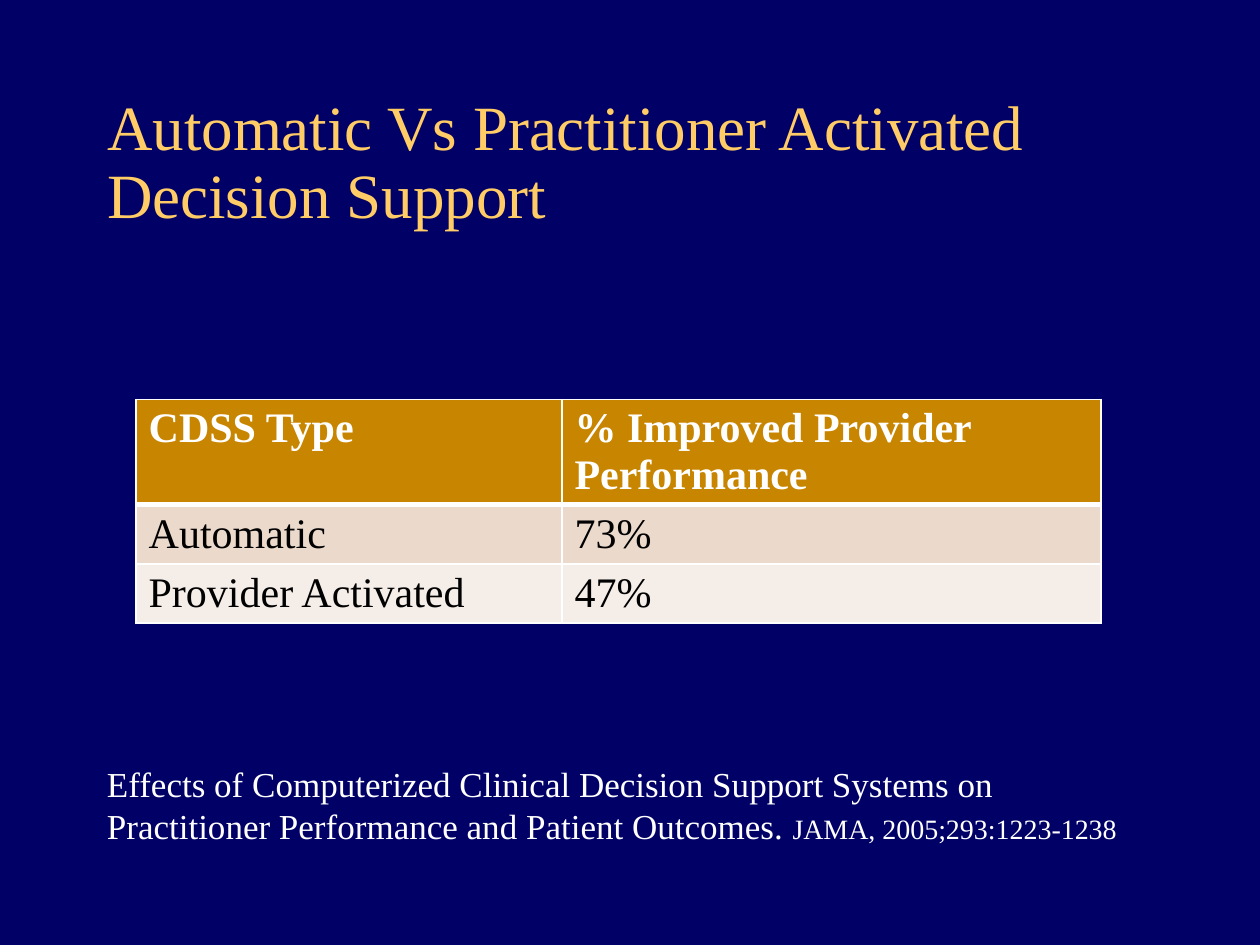
from lxml import etree
from pptx import Presentation
from pptx import util as u
from pptx.dml import color
from pptx.enum import text
from pptx.oxml import ns

WIDTH, HEIGHT = 10, 7.5
TITLE_ONLY = 5


def rgb(value):
    return color.RGBColor.from_string(value)


def apply(target, values):
    for name, value in values.items():
        setattr(target, name, value)


class SlideBuilder:
    font = "Times New Roman"
    background, gold, white, black = "000066", "FFCC66", "FFFFFF", "000000"
    header_fill, band_fills = "C88500", ("EBD9CC", "F5EDE7")

    def __init__(self, presentation):
        self.slide = presentation.slides.add_slide(presentation.slide_layouts[TITLE_ONLY])
        fill = self.slide.background.fill
        fill.solid()
        fill.fore_color.rgb = rgb(self.background)

    def box(self, left, top, width, height):
        return (u.Inches(left * WIDTH), u.Inches(top * HEIGHT),
                u.Inches(width * WIDTH), u.Inches(height * HEIGHT))

    def add_text(self, paragraph, content, size, hex_color, bold=False):
        run = paragraph.add_run()
        run.text = content
        apply(run.font, {"name": self.font, "size": u.Pt(size), "bold": bold})
        run.font.color.rgb = rgb(hex_color)

    def title(self, content, *shares):
        shape = self.slide.shapes.title
        apply(shape, dict(zip(("left", "top", "width", "height"), self.box(*shares))))
        apply(shape.text_frame, {
            "word_wrap": True,
            "auto_size": text.MSO_AUTO_SIZE.NONE,
            "vertical_anchor": text.MSO_ANCHOR.MIDDLE,
        })
        paragraph = shape.text_frame.paragraphs[0]
        apply(paragraph, {"alignment": text.PP_ALIGN.LEFT, "line_spacing": 0.9})
        self.add_text(paragraph, content, 36, self.gold)

    def borders(self, cell, top, bottom):
        properties = cell._tc.get_or_add_tcPr()
        widths = {"lnL": 1, "lnR": 1, "lnT": top, "lnB": bottom}
        for index, (side, points) in enumerate(widths.items()):
            line = etree.Element(ns.qn(f"a:{side}"), w=str(int(u.Pt(points))))
            fill = etree.SubElement(line, ns.qn("a:solidFill"))
            etree.SubElement(fill, ns.qn("a:srgbClr"), val=self.white)
            properties.insert(index, line)

    def table(self, rows, column_widths, row_height, *shares):
        shape = self.slide.shapes.add_table(len(rows), len(rows[0]), *self.box(*shares))
        for column, width in zip(shape.table.columns, column_widths):
            column.width = u.Inches(width * WIDTH)
        for row_index, row in enumerate(rows):
            header = row_index == 0
            fill = self.header_fill if header else self.band_fills[(row_index - 1) % 2]
            shape.table.rows[row_index].height = u.Inches(row_height * HEIGHT)
            for column_index, content in enumerate(row):
                cell = shape.table.cell(row_index, column_index)
                cell.fill.solid()
                cell.fill.fore_color.rgb = rgb(fill)
                self.add_text(cell.text_frame.paragraphs[0], content, 24,
                              self.white if header else self.black, header)
                self.borders(cell, 3 if row_index == 1 else 1, 3 if header else 1)
        shape.height = self.box(*shares)[3]

    def citation(self, runs, *shares):
        frame = self.slide.shapes.add_textbox(*self.box(*shares)).text_frame
        apply(frame, {"word_wrap": True, "auto_size": text.MSO_AUTO_SIZE.SHAPE_TO_FIT_TEXT})
        for content, size in runs:
            self.add_text(frame.paragraphs[0], content, size, self.white)


def main():
    presentation = Presentation()
    apply(presentation, {"slide_width": u.Inches(WIDTH), "slide_height": u.Inches(HEIGHT)})
    builder = SlideBuilder(presentation)
    builder.title("Automatic Vs Practitioner Activated Decision Support",
                  0.075, 0.09, 0.85, 1 / 6)
    builder.table([
        ("CDSS Type", "% Improved Provider Performance"),
        ("Automatic", "73%"),
        ("Provider Activated", "47%"),
    ], (0.338, 0.428), 0.055, 0.108, 0.4225, 0.767, 0.2)
    builder.citation([
        ("Effects of Computerized Clinical Decision Support Systems on "
         "Practitioner Performance and Patient Outcomes. ", 20),
        ("JAMA, 2005;293:1223-1238", 16),
    ], 0.075, 0.8, 0.842, 0.103)
    presentation.save("out.pptx")


if __name__ == "__main__":
    main()
